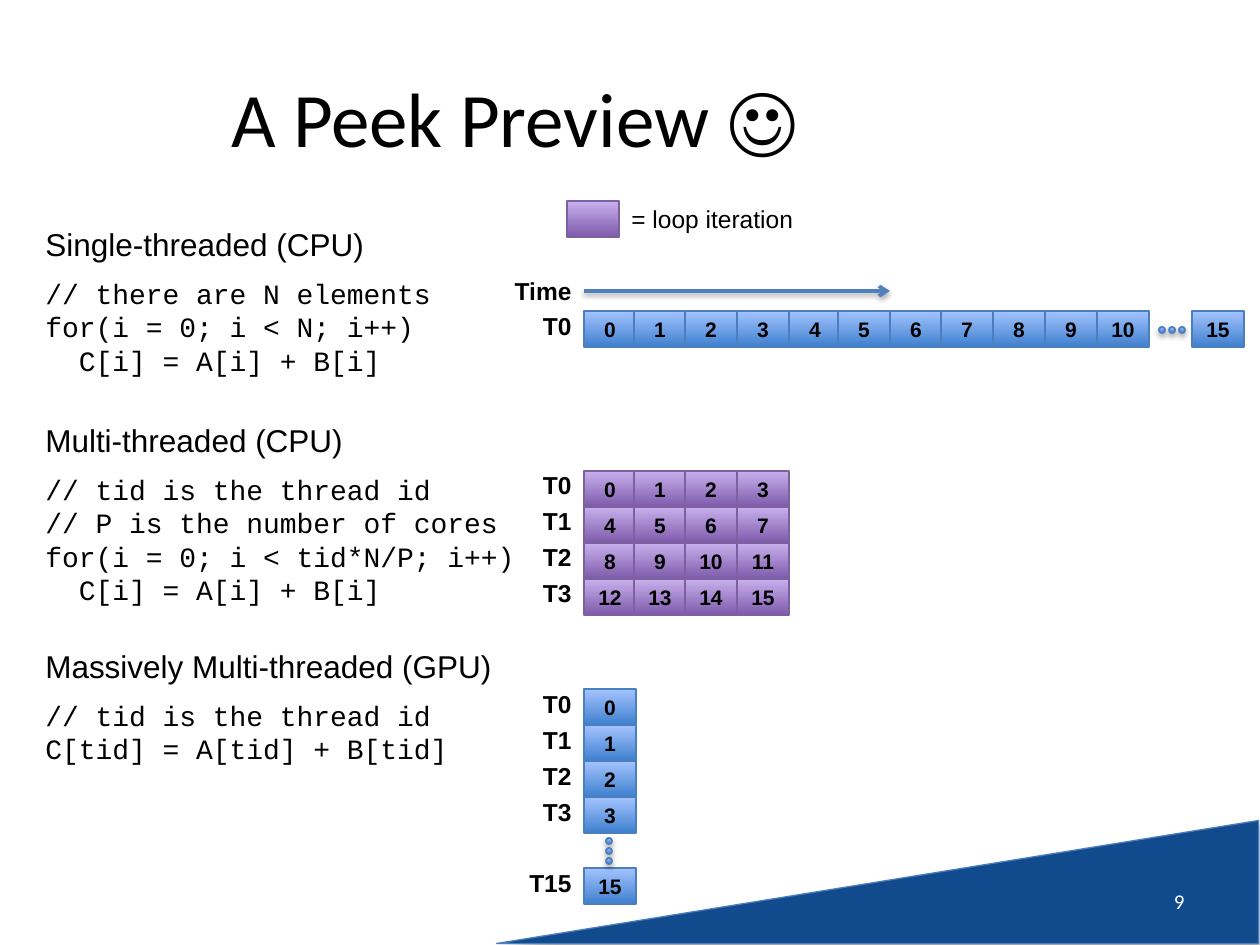
"""Build a slide comparing single-threaded, multi-threaded and GPU loop execution."""
from lxml.etree import SubElement
from pptx import Presentation
from pptx.dml.color import RGBColor
from pptx.enum.shapes import MSO_CONNECTOR, MSO_SHAPE
from pptx.enum.text import MSO_ANCHOR, PP_ALIGN
from pptx.oxml import parse_xml
from pptx.oxml.ns import nsdecls, qn
from pptx.util import Emu, Pt

PX = 914400 / 126
BLACK = RGBColor(0x00, 0x00, 0x00)
WHITE = RGBColor(0xFF, 0xFF, 0xFF)
NAVY = RGBColor(0x11, 0x4B, 0x8E)
ARROW_BLUE = RGBColor(0x4F, 0x81, 0xBD)
LINE_BLUE = RGBColor(0x4B, 0x7E, 0xBC)
BLUE = (RGBColor(0x3F, 0x80, 0xCE), RGBColor(0xA4, 0xC4, 0xFF), LINE_BLUE)
PURPLE = (RGBColor(0x7F, 0x5B, 0xAB), RGBColor(0xC8, 0xB0, 0xED), RGBColor(0x7D, 0x60, 0xA0))
SHADOW = (
    f'<a:effectLst {nsdecls("a")}><a:outerShdw blurRad="39370" dist="22860" dir="5400000" '
    'rotWithShape="0"><a:srgbClr val="000000"><a:alpha val="35000"/></a:srgbClr>'
    '</a:outerShdw></a:effectLst>'
)

presentation = Presentation()
presentation.slide_width = Emu(round(1260 * PX))
presentation.slide_height = Emu(round(945 * PX))
slide = presentation.slides.add_slide(presentation.slide_layouts[6])


def add_text(box, lines, size, font="Arial", color=BLACK, bold=False,
             align=PP_ALIGN.LEFT, anchor=MSO_ANCHOR.TOP, wrap=False):
    text_box = slide.shapes.add_textbox(*[Emu(round(value * PX)) for value in box])
    frame = text_box.text_frame
    frame.word_wrap = wrap
    frame.vertical_anchor = anchor
    frame.text = "\n".join(lines)
    for paragraph in frame.paragraphs:
        paragraph.alignment = align
        paragraph.font.size = Pt(size)
        paragraph.font.name = font
        paragraph.font.bold = bold
        paragraph.font.color.rgb = color


def add_block(kind, box, colors, label=""):
    shape = slide.shapes.add_shape(kind, *[Emu(round(value * PX)) for value in box])
    shape.shadow.inherit = False
    shape.fill.gradient()
    shape.fill.gradient_angle = 90
    for stop, color, position in zip(shape.fill.gradient_stops, colors, (0, 1)):
        stop.color.rgb = color
        stop.position = position
    shape.line.color.rgb = colors[2]
    shape.line.width = Pt(1)
    if label:
        frame = shape.text_frame
        frame.text = label
        frame.vertical_anchor = MSO_ANCHOR.MIDDLE
        paragraph = frame.paragraphs[0]
        paragraph.alignment = PP_ALIGN.CENTER
        paragraph.font.size = Pt(12)
        paragraph.font.name = "Arial"
        paragraph.font.bold = True
        paragraph.font.color.rgb = BLACK
    return shape


triangle = slide.shapes.add_shape(
    MSO_SHAPE.RIGHT_TRIANGLE, *[Emu(round(value * PX)) for value in (816, 501, 123, 762)])
triangle.rotation = 270
triangle.shadow.inherit = False
triangle.fill.solid()
triangle.fill.fore_color.rgb = NAVY
triangle.line.color.rgb = LINE_BLUE
triangle.line.width = Pt(0.75)
shadowed = [triangle]

add_text((63, 38, 903, 157), ["A Peek Preview ☺"], 44, "Calibri",
         align=PP_ALIGN.CENTER, anchor=MSO_ANCHOR.MIDDLE, wrap=True)
add_text((903, 876, 294, 50), ["9"], 12, "Calibri", WHITE,
         align=PP_ALIGN.RIGHT, anchor=MSO_ANCHOR.MIDDLE, wrap=True)

sections = [
    (219, 348, "Single-threaded (CPU)", 416,
     ["// there are N elements", "for(i = 0; i < N; i++)", "  C[i] = A[i] + B[i]"]),
    (415, 326, "Multi-threaded (CPU)", 500,
     ["// tid is the thread id", "// P is the number of cores",
      "for(i = 0; i < tid*N/P; i++)", "  C[i] = A[i] + B[i]"]),
    (641, 476, "Massively Multi-threaded (GPU)", 432,
     ["// tid is the thread id", "C[tid] = A[tid] + B[tid]"]),
]
for top, heading_width, heading, code_width, code in sections:
    add_text((33, top, heading_width, 51), [heading], 18)
    add_text((33, top + 51, code_width, 13 + 34 * len(code)), code, 16, "Courier New")

columns = [584, 634, 685, 737, 789, 838, 890, 941, 993, 1045, 1097]
cells = [(left, 311, BLUE, number) for number, left in enumerate(columns)]
cells.append((1192, 311, BLUE, 15))
cells += [(columns[number % 4], 471 + 36 * (number // 4), PURPLE, number) for number in range(16)]
cells += [(584, 689 + 36 * number, BLUE, number) for number in range(4)]
cells.append((584, 868, BLUE, 15))
for left, top, colors, number in cells:
    add_block(MSO_SHAPE.RECTANGLE, (left, top, 52, 36), colors, str(number))

for step in (0, 10, 20):
    for left, top in ((1159 + step, 327), (606, 838 + step)):
        shadowed.append(add_block(MSO_SHAPE.OVAL, (left, top, 6, 6), BLUE))

add_block(MSO_SHAPE.RECTANGLE, (567, 201, 52, 36), PURPLE)
add_text((619, 198, 189, 43), ["= loop iteration"], 14)

labels = [("Time", 83, 270), ("T0", 54, 305), ("T15", 68, 862)]
labels += [(f"T{row}", 54, top + 36 * row) for top in (464, 683) for row in range(4)]
for label, width, top in labels:
    add_text((584 - width, top, width, 43), [label], 14, bold=True, align=PP_ALIGN.RIGHT)

arrow = slide.shapes.add_connector(
    MSO_CONNECTOR.STRAIGHT, *[Emu(round(value * PX)) for value in (584, 291, 890, 291)])
arrow.line.color.rgb = ARROW_BLUE
arrow.line.width = Pt(2)
SubElement(arrow.line._get_or_add_ln(), qn("a:tailEnd"), type="arrow")
shadowed.append(arrow)

for shape in shadowed:
    properties = shape._element.spPr
    for effects in properties.findall(qn("a:effectLst")):
        properties.remove(effects)
    properties.append(parse_xml(SHADOW))

presentation.save("out.pptx")
